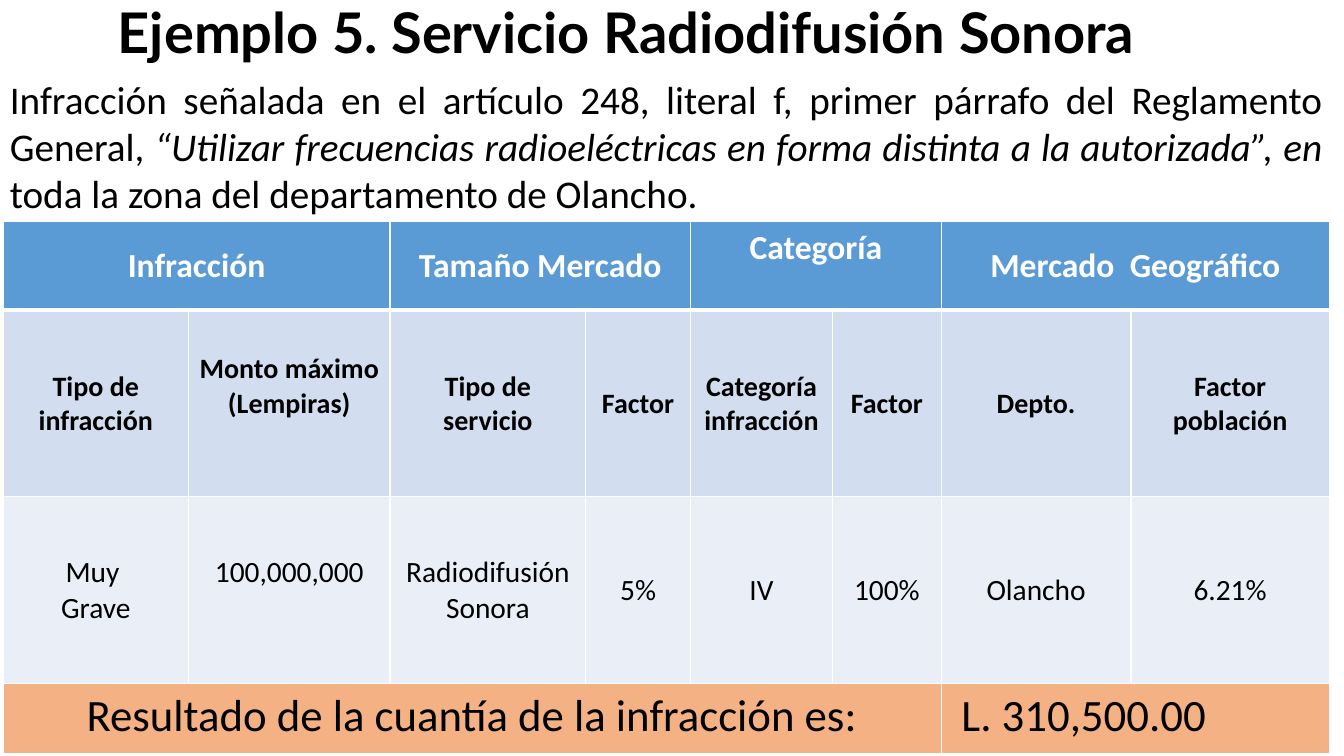
import pptx
import pptx.dml.color
import pptx.enum.text
import pptx.oxml
import pptx.oxml.ns
import pptx.util
from dataclasses import dataclass

Cm = pptx.util.Cm
ALIGN = pptx.enum.text.PP_ALIGN
ANCHOR = pptx.enum.text.MSO_ANCHOR


@dataclass(frozen=True)
class Theme:
    title_font: str = "Lato"
    body_font: str = "Calibri"
    black: str = "000000"
    white: str = "FFFFFF"
    header_fill: str = "5B9BD5"
    label_fill: str = "D2DEEF"
    value_fill: str = "EAEFF7"
    result_fill: str = "F4B183"
    title_size: int = 40
    intro_size: int = 28
    header_size: int = 24
    label_size: int = 20
    value_size: int = 21
    result_size: int = 32
    thin: int = 1
    thick: int = 3


THEME = Theme()
TITLE = "Ejemplo 5. Servicio Radiodifusión Sonora"
INTRO = [
    ("Infracción señalada en el artículo 248, literal f, primer párrafo del Reglamento General, ", False),
    ("“Utilizar frecuencias radioeléctricas en forma distinta a la autorizada”, en ", True),
    ("toda la zona del departamento de Olancho.", False),
]
GROUPS = [["Infracción"], ["Tamaño Mercado"], ["Categoría"], ["Mercado  Geográfico"]]
LABELS = [
    ["Tipo de infracción"], ["Monto máximo", "(Lempiras)"], ["Tipo de servicio"], ["Factor"],
    ["Categoría infracción"], ["Factor"], ["Depto."], ["Factor", "población"],
]
VALUES = [
    ["Muy ", "Grave"], ["100,000,000"], ["Radiodifusión", "Sonora"], ["5%"],
    ["IV"], ["100%"], ["Olancho"], ["6.21%"],
]
RESULTS = [["Resultado de la cuantía de la infracción es:"], ["L. 310,500.00"]]

TABLE_ROWS = [
    (2.24, GROUPS, [2, 2, 2, 2], THEME.header_fill, THEME.header_size, THEME.white, True),
    (4.7, LABELS, [1] * 8, THEME.label_fill, THEME.label_size, THEME.black, True),
    (4.7, VALUES, [1] * 8, THEME.value_fill, THEME.value_size, THEME.black, False),
    (1.78, RESULTS, [6, 2], THEME.result_fill, THEME.result_size, THEME.black, False),
]
COLUMN_WIDTHS = [4.67, 5.08, 4.93, 2.64, 3.58, 2.74, 4.78, 5.0]
RAISED_CELLS = {(0, 4): 1.04, (1, 1): 1.0, (2, 1): 1.04}
RESULT_ROW = 3
AMOUNT_COLUMN = 6
AMOUNT_INDENT = 0.51


def color(value):
    return pptx.dml.color.RGBColor.from_string(value)


def add_run(paragraph, text, size, fill, font=THEME.body_font, bold=False, italic=False):
    run = paragraph.add_run()
    run.text = text
    run.font.name = font
    run.font.size = pptx.util.Pt(size)
    run.font.bold = bold
    run.font.italic = italic
    run.font.color.rgb = color(fill)


def add_text_box(slide, left, top, width, height, alignment):
    box = slide.shapes.add_textbox(Cm(left), Cm(top), Cm(width), Cm(height))
    box.text_frame.word_wrap = True
    paragraph = box.text_frame.paragraphs[0]
    paragraph.alignment = alignment
    return paragraph


def add_borders(cell, top, bottom):
    properties = cell._tc.get_or_add_tcPr()
    sides = {"lnL": THEME.thin, "lnR": THEME.thin, "lnT": top, "lnB": bottom}
    for side, points in sides.items():
        properties.append(pptx.oxml.parse_xml(
            f'<a:{side} {pptx.oxml.ns.nsdecls("a")} w="{pptx.util.Pt(points)}">'
            f'<a:solidFill><a:srgbClr val="{THEME.white}"/></a:solidFill></a:{side}>'
        ))


def add_infraction_table(slide):
    heights = [row[0] for row in TABLE_ROWS]
    frame = slide.shapes.add_table(
        len(heights), len(COLUMN_WIDTHS), Cm(0.08), Cm(5.58),
        Cm(sum(COLUMN_WIDTHS)), Cm(sum(heights)),
    )
    table = frame.table
    table.first_row = False
    table.horz_banding = False
    for column, width in zip(table.columns, COLUMN_WIDTHS):
        column.width = Cm(width)
    for index, (height, entries, spans, fill, size, ink, bold) in enumerate(TABLE_ROWS):
        table.rows[index].height = Cm(height)
        for cell in table.rows[index].cells:
            add_borders(
                cell,
                THEME.thick if index == 1 else THEME.thin,
                THEME.thick if index == 0 else THEME.thin,
            )
            cell.fill.solid()
            cell.fill.fore_color.rgb = color(fill)
        column = 0
        for lines, span in zip(entries, spans):
            cell = table.cell(index, column)
            if span > 1:
                cell.merge(table.cell(index, column + span - 1))
            is_amount = (index, column) == (RESULT_ROW, AMOUNT_COLUMN)
            cell.vertical_anchor = ANCHOR.TOP if index == RESULT_ROW else ANCHOR.MIDDLE
            if (index, column) in RAISED_CELLS:
                cell.margin_bottom = Cm(RAISED_CELLS[index, column])
            if is_amount:
                cell.margin_left = Cm(AMOUNT_INDENT)
            for number, line in enumerate(lines):
                text_frame = cell.text_frame
                paragraph = text_frame.add_paragraph() if number else text_frame.paragraphs[0]
                paragraph.alignment = ALIGN.LEFT if is_amount else ALIGN.CENTER
                add_run(paragraph, line, size, ink, bold=bold)
            column += span


def main():
    presentation = pptx.Presentation()
    presentation.slide_width = Cm(33.87)
    presentation.slide_height = Cm(19.05)
    slide = presentation.slides.add_slide(presentation.slide_layouts[6])

    title = add_text_box(slide, 2.72, 0, 29.21, 2.31, ALIGN.LEFT)
    title.line_spacing = 0.9
    add_run(title, TITLE, THEME.title_size, THEME.black, THEME.title_font, bold=True)

    intro = add_text_box(slide, 0, 1.78, 33.58, 5.05, ALIGN.JUSTIFY)
    for text, italic in INTRO:
        add_run(intro, text, THEME.intro_size, THEME.black, italic=italic)

    add_infraction_table(slide)
    presentation.save("out.pptx")


if __name__ == "__main__":
    main()
